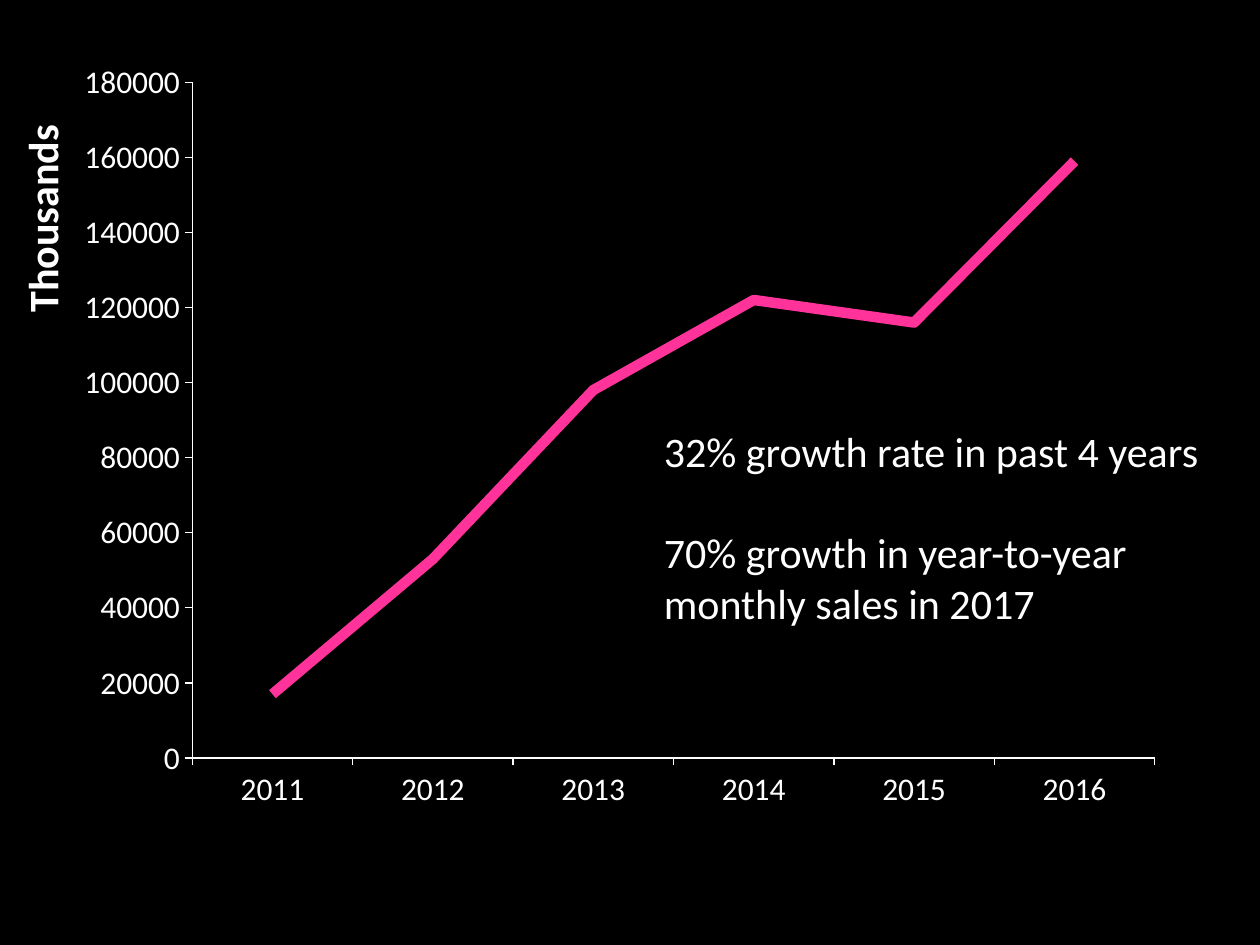
from dataclasses import dataclass

from lxml import etree
from pptx import Presentation
from pptx import util as u
from pptx.chart import data as chart_data
from pptx.dml.color import RGBColor
from pptx.enum import chart as chart_enum
from pptx.enum import text as text_enum
from pptx.oxml import ns, parse_xml

COLORS = {"background": "000000", "foreground": "FFFFFF", "sales": "FF3399"}
FONT = "Calibri"
WIDTH, HEIGHT = u.Inches(10), u.Inches(7.5)

SALES = {
    "2011": 17000,
    "2012": 53000,
    "2013": 98000,
    "2014": 122000,
    "2015": 116000,
    "2016": 159000,
}


@dataclass
class Box:
    """A rectangle in shares of the slide's width and height."""
    left: float
    top: float
    width: float
    height: float

    def lengths(self) -> tuple[int, int, int, int]:
        return (int(self.left * WIDTH), int(self.top * HEIGHT),
                int(self.width * WIDTH), int(self.height * HEIGHT))


@dataclass
class Label:
    box: Box
    paragraphs: list[str]
    bold: bool = False
    upward: bool = False


CHART_BOX = Box(0.067, 0.067, 0.85, 0.8)
PLOT_LAYOUT = {"x": 0.098, "y": 0.025, "w": 0.902, "h": 0.894}
LABELS = [
    Label(Box(0.517, 0.444, 0.458, 0.23),
          ["32% growth rate in past 4 years",
           "70% growth in year-to-year monthly sales in 2017"]),
    Label(Box(0.008, 0.033, 0.061, 0.311), ["Thousands"], bold=True, upward=True),
]


def color(name: str) -> RGBColor:
    return RGBColor.from_string(COLORS[name])


def style_font(font, size: float, bold: bool = False) -> None:
    font.name, font.size, font.bold = FONT, u.Pt(size), bold
    font.color.rgb = color("foreground")


def set_plot_layout(chart) -> None:
    """Fix the inner plot area as shares of the chart."""
    plot_area = chart.plots[0]._element.getparent()
    for old in plot_area.findall(ns.qn("c:layout")):
        plot_area.remove(old)
    layout = parse_xml(f"<c:layout {ns.nsdecls('c')}><c:manualLayout/></c:layout>")
    settings = {"layoutTarget": "inner", "xMode": "edge", "yMode": "edge", **PLOT_LAYOUT}
    for tag, value in settings.items():
        etree.SubElement(layout[0], ns.qn(f"c:{tag}")).set("val", str(value))
    plot_area.insert(0, layout)


def add_sales_chart(slide) -> None:
    data = chart_data.CategoryChartData()
    data.categories = list(SALES)
    data.add_series("Series 1", list(SALES.values()))
    chart = slide.shapes.add_chart(
        chart_enum.XL_CHART_TYPE.LINE, *CHART_BOX.lengths(), data).chart
    chart.has_legend = chart.has_title = False
    style_font(chart.font, 18)
    for axis in (chart.category_axis, chart.value_axis):
        axis.has_major_gridlines = False
        axis.major_tick_mark = chart_enum.XL_TICK_MARK.OUTSIDE
        axis.minor_tick_mark = chart_enum.XL_TICK_MARK.NONE
        axis.format.line.color.rgb = color("foreground")
        axis.format.line.width = u.Pt(0.75)
    chart.value_axis.minimum_scale = 0
    chart.value_axis.maximum_scale = 180000
    chart.value_axis.major_unit = 20000
    chart.value_axis.tick_labels.number_format = "0"
    chart.value_axis.tick_labels.number_format_is_linked = False
    chart.plots[0].vary_by_categories = False
    series = chart.plots[0].series[0]
    series.smooth = False
    series.marker.style = chart_enum.XL_MARKER_STYLE.NONE
    series.format.line.color.rgb = color("sales")
    series.format.line.width = u.Pt(6)
    set_plot_layout(chart)


def add_label(slide, label: Label) -> None:
    frame = slide.shapes.add_textbox(*label.box.lengths()).text_frame
    frame.word_wrap = True
    frame.auto_size = text_enum.MSO_AUTO_SIZE.SHAPE_TO_FIT_TEXT
    if label.upward:
        frame._txBody.bodyPr.set("vert", "vert270")
    for index, content in enumerate(label.paragraphs):
        paragraph = frame.add_paragraph() if index else frame.paragraphs[0]
        if index:
            paragraph.space_before = u.Pt(29)
        run = paragraph.add_run()
        run.text = content
        style_font(run.font, 24, label.bold)


def main() -> None:
    presentation = Presentation()
    presentation.slide_width, presentation.slide_height = WIDTH, HEIGHT
    slide = presentation.slides.add_slide(presentation.slide_layouts[6])
    slide.background.fill.solid()
    slide.background.fill.fore_color.rgb = color("background")
    add_sales_chart(slide)
    for label in LABELS:
        add_label(slide, label)
    presentation.save("out.pptx")


if __name__ == "__main__":
    main()
